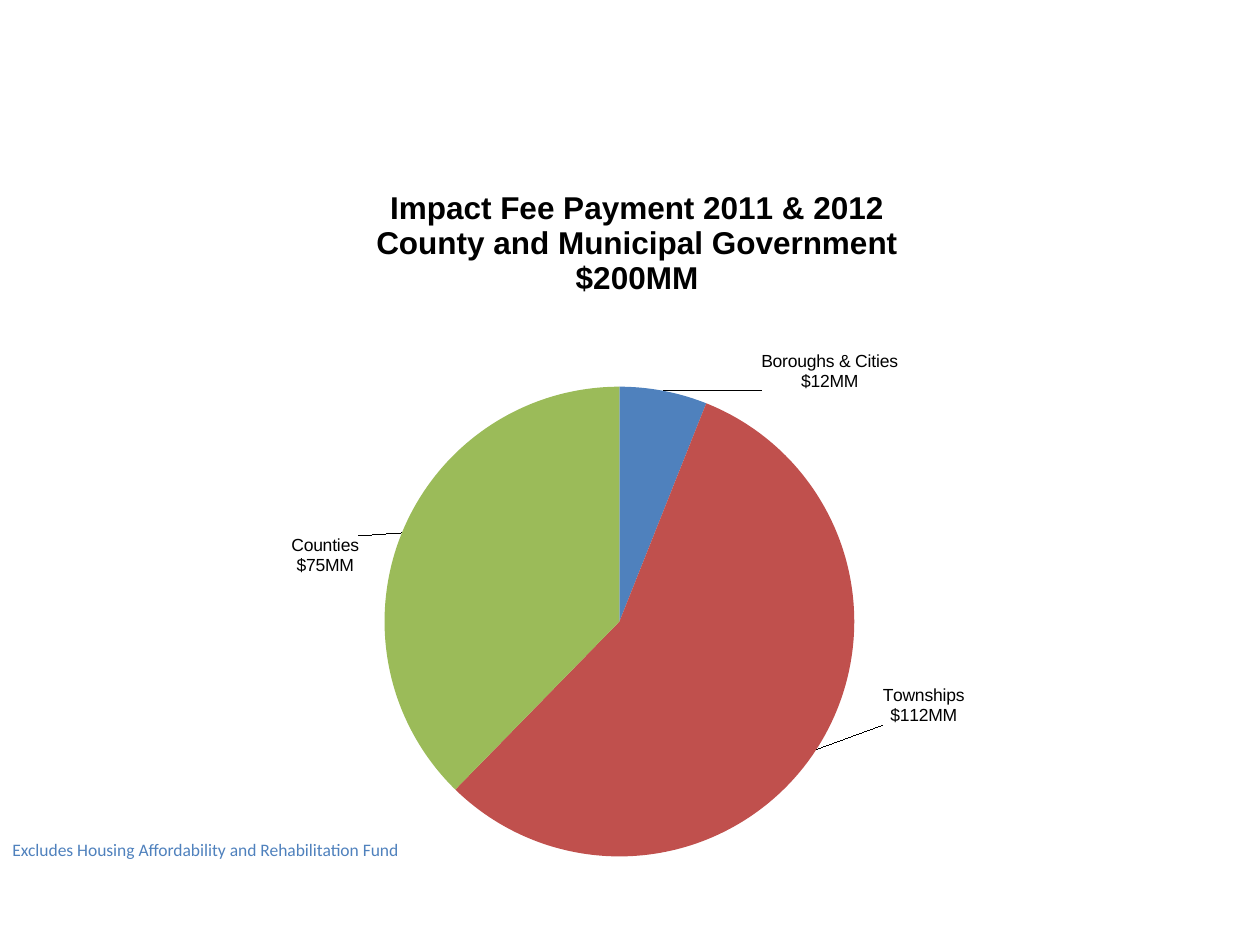
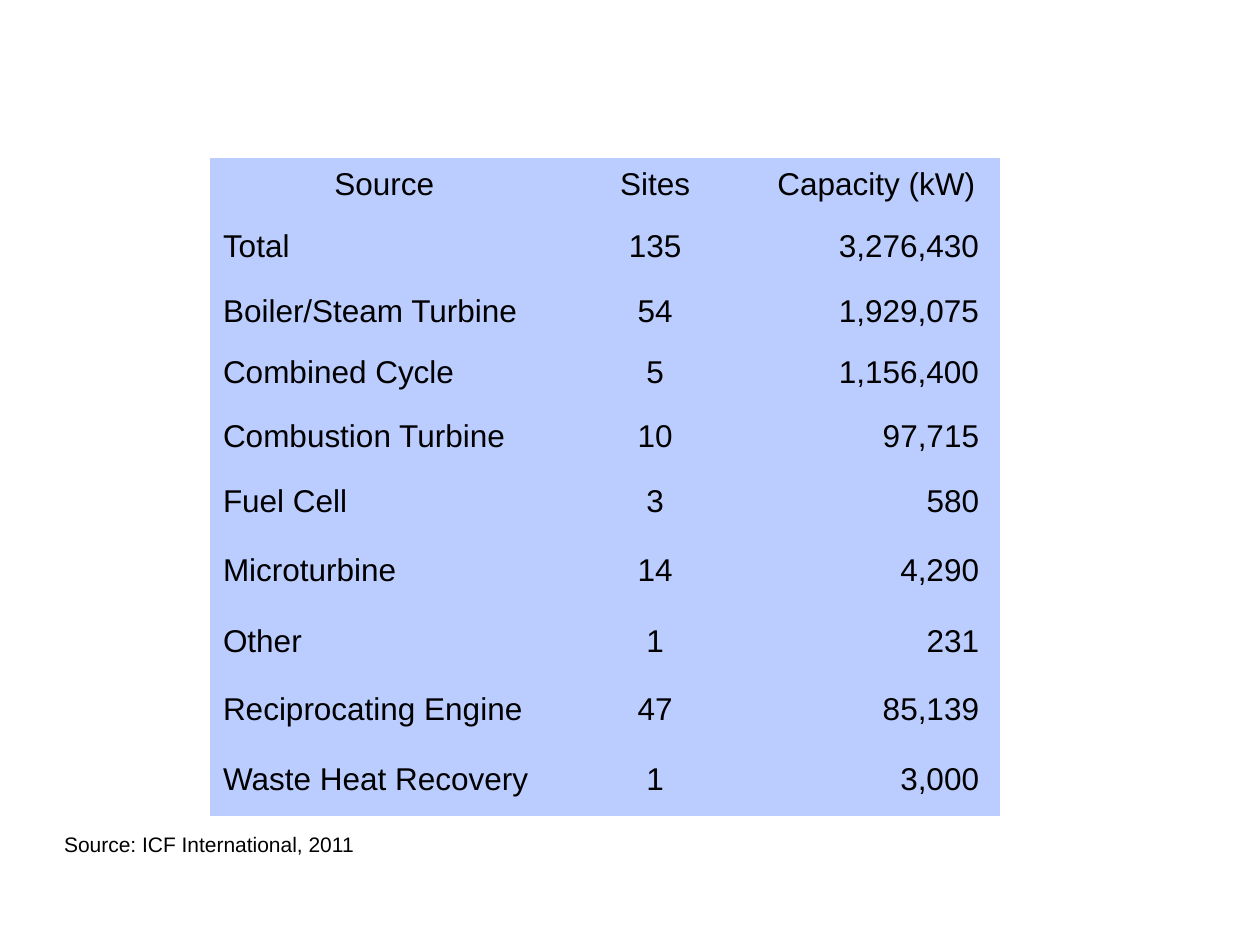
from lxml.etree import SubElement, QName
from pptx import Presentation
from pptx.chart.data import CategoryChartData
from pptx.dml.color import RGBColor
from pptx.enum.chart import XL_CHART_TYPE, XL_LABEL_POSITION
from pptx.enum.text import MSO_ANCHOR, PP_ALIGN as Align
from pptx.oxml.ns import qn
from pptx.util import Inches, Pt

BLACK = RGBColor(0x00, 0x00, 0x00)
BLUE = RGBColor(0x4F, 0x81, 0xBD)
RED = RGBColor(0xC0, 0x50, 0x4D)
GREEN = RGBColor(0x9B, 0xBB, 0x59)
PALE_BLUE = RGBColor(0xBB, 0xCC, 0xFF)
BLANK_LAYOUT = 6

FEE_TITLE = "Impact Fee Payment 2011 & 2012\nCounty and Municipal Government\n$200MM"
# category, dollars, colour, label, label offset as a share of the chart
FEES = [
    ("Boroughs & Cities", 12_000_000, BLUE, "Boroughs & Cities\n$12MM", (0.08, 0.01)),
    ("Township", 112_000_000, RED, "Townships\n$112MM", (0.05, -0.09)),
    ("County", 75_000_000, GREEN, "Counties\n$75MM", (-0.03, 0.06)),
]
FEE_NOTE = "Excludes Housing Affordability and Rehabilitation Fund"

CAPACITY = [
    ("Source", "Sites", "Capacity (kW)"),
    ("Total", "135", "3,276,430"),
    ("Boiler/Steam Turbine", "54", "1,929,075"),
    ("Combined Cycle", "5", "1,156,400"),
    ("Combustion Turbine", "10", "97,715"),
    ("Fuel Cell", "3", "580"),
    ("Microturbine", "14", "4,290"),
    ("Other", "1", "231"),
    ("Reciprocating Engine", "47", "85,139"),
    ("Waste Heat Recovery", "1", "3,000"),
]
COLUMN_WIDTHS = [2.76, 1.61, 1.9]
ROW_HEIGHTS = [0.43, 0.55, 0.49, 0.48, 0.53, 0.5, 0.59, 0.54, 0.54, 0.58]
COLUMN_ALIGNS = [Align.LEFT, Align.CENTER, Align.RIGHT]
CAPACITY_NOTE = "Source: ICF International, 2011"


def format_text(frame, size, color=BLACK, name="Arial", bold=False, align=None):
    for para in frame.paragraphs:
        para.alignment = align
        for span in para.runs:
            font = span.font
            font.size, font.name, font.bold = Pt(size), name, bold
            font.color.rgb = color


def add_note(slide, text, left, top, width, height, wrap, **style):
    box = slide.shapes.add_textbox(*map(Inches, (left, top, width, height)))
    box.text_frame.word_wrap = wrap
    box.text_frame.text = text
    format_text(box.text_frame, **style)


def set_layout(element, position, **settings):
    """Give a chart part a manual layout, placed as child number position."""
    for old in element.findall(qn("c:layout")):
        element.remove(old)
    layout = SubElement(element, qn("c:layout"))
    element.insert(position, layout)
    manual = SubElement(layout, qn("c:manualLayout"))
    for tag, value in settings.items():
        SubElement(manual, QName(qn("c:layout")).namespace.join("{}") + tag).set("val", str(value))


def add_fee_slide(deck):
    slide = deck.slides.add_slide(deck.slide_layouts[BLANK_LAYOUT])
    data = CategoryChartData(number_format='"$"#,##0')
    data.categories = [fee[0] for fee in FEES]
    data.add_series("Series 1", [fee[1] for fee in FEES])
    place = map(Inches, (0.28, 1.04, 9.56, 5.99))
    chart = slide.shapes.add_chart(XL_CHART_TYPE.PIE, *place, data).chart
    chart.has_legend = False
    chart.font.size, chart.font.name = Pt(10), "Arial"
    chart.font.color.rgb = BLACK

    chart.has_title = True
    title = chart.chart_title
    title.text_frame.text = FEE_TITLE
    format_text(title.text_frame, 18, bold=True, align=Align.CENTER)
    title.include_in_layout = False
    set_layout(title._element, 1, xMode="edge", yMode="edge", x=0.28, y=0.07)
    set_layout(chart._chartSpace.chart.plotArea, 0, layoutTarget="inner",
               xMode="edge", yMode="edge", x=0.29, y=0.33, w=0.39, h=0.64)

    plot = chart.plots[0]
    plot.vary_by_categories = True
    series = plot.series[0]
    labels = series.data_labels
    labels.show_value = labels.show_category_name = True
    labels.number_format, labels.number_format_is_linked = '"$"#,##0', False
    for index, (_, _, color, text, (x, y)) in enumerate(FEES):
        point = series.points[index]
        point.format.fill.solid()
        point.format.fill.fore_color.rgb = color
        label = point.data_label
        label.text_frame.text = text
        format_text(label.text_frame, 10)
        label.position = XL_LABEL_POSITION.OUTSIDE_END
        set_layout(labels._element.findall(qn("c:dLbl"))[index], 1, x=x, y=y)

    add_note(slide, FEE_NOTE, 0, 6.61, 5.25, 0.28, wrap=True,
             size=10, color=BLUE, name="Calibri")


def add_capacity_slide(deck):
    slide = deck.slides.add_slide(deck.slide_layouts[BLANK_LAYOUT])
    size = sum(COLUMN_WIDTHS), sum(ROW_HEIGHTS)
    table = slide.shapes.add_table(len(CAPACITY), len(COLUMN_WIDTHS),
                                   *map(Inches, (1.67, 1.25, *size))).table
    table.first_row = table.horz_banding = False
    for column, width in zip(table.columns, COLUMN_WIDTHS):
        column.width = Inches(width)
    for row_index, (row, height) in enumerate(zip(table.rows, ROW_HEIGHTS)):
        row.height = Inches(height)
        for column_index, cell in enumerate(row.cells):
            cell.text = CAPACITY[row_index][column_index]
            cell.vertical_anchor = MSO_ANCHOR.MIDDLE
            cell.margin_right = Inches(0.17 if column_index else 0.1)
            cell.fill.solid()
            cell.fill.fore_color.rgb = PALE_BLUE
            align = COLUMN_ALIGNS[column_index] if row_index else Align.CENTER
            format_text(cell.text_frame, 18, align=align)
    # Lines in the cell colour hide the grid of the table style
    for cell in table.iter_cells():
        properties = cell._tc.get_or_add_tcPr()
        for position, side in enumerate(("a:lnL", "a:lnR", "a:lnT", "a:lnB")):
            line = SubElement(properties, qn(side), w="0")
            SubElement(line, qn("a:noFill"))
            properties.insert(position, line)

    add_note(slide, CAPACITY_NOTE, 0.41, 6.55, 2.52, 0.3, wrap=False, size=12)


def main():
    deck = Presentation()
    deck.slide_width, deck.slide_height = Inches(10), Inches(7.5)
    add_fee_slide(deck)
    add_capacity_slide(deck)
    deck.save("out.pptx")


if __name__ == "__main__":
    main()
